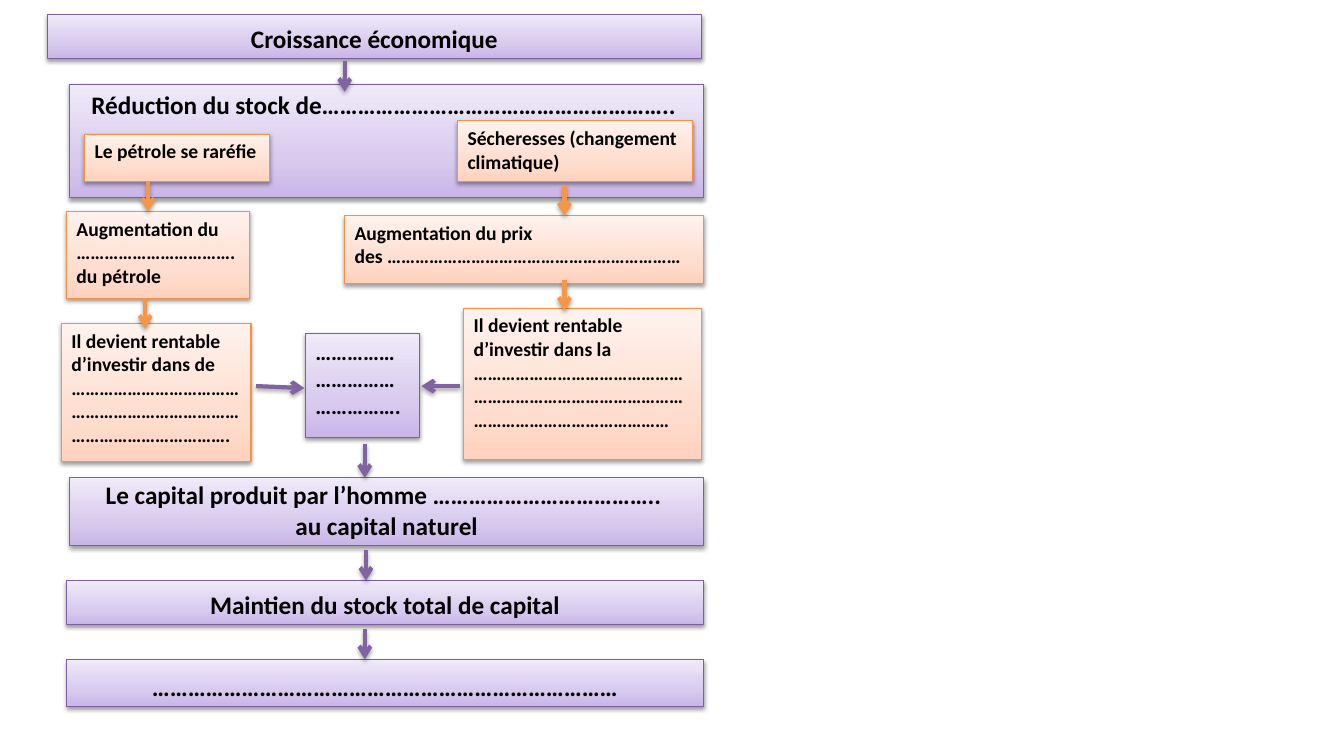
from copy import deepcopy
from dataclasses import dataclass

from lxml import etree
from pptx import Presentation
from pptx.dml.color import RGBColor
from pptx.enum.shapes import MSO_CONNECTOR, MSO_SHAPE
from pptx.enum.text import MSO_ANCHOR, PP_ALIGN
from pptx.oxml.ns import qn
from pptx.shapes.autoshape import Shape
from pptx.slide import Slide
from pptx.util import Pt

RECTANGLE = MSO_SHAPE.RECTANGLE
STRAIGHT = MSO_CONNECTOR.STRAIGHT
TOP, BOTTOM = MSO_ANCHOR.TOP, MSO_ANCHOR.BOTTOM
LEFT, CENTER = PP_ALIGN.LEFT, PP_ALIGN.CENTER

BLACK = RGBColor(0x00, 0x00, 0x00)
FONT = "Calibri"
STOP_POSITIONS = (0, 0.35, 1)
ARROW_LENGTH = 21.6


@dataclass(frozen=True)
class Palette:
    gradient: tuple[RGBColor, RGBColor, RGBColor]
    outline: RGBColor
    arrow: RGBColor


@dataclass(frozen=True)
class Box:
    left: float
    top: float
    width: float
    height: float
    palette: Palette
    text: str
    size: float = 14
    align: PP_ALIGN = LEFT
    anchor: MSO_ANCHOR = TOP


@dataclass(frozen=True)
class Arrow:
    palette: Palette
    x: float
    y: float
    dx: float = 0
    dy: float = ARROW_LENGTH


PURPLE = Palette(
    (RGBColor(0xC9, 0xB5, 0xE8), RGBColor(0xD8, 0xCB, 0xEE), RGBColor(0xF0, 0xEA, 0xF9)),
    RGBColor(0x7D, 0x60, 0xA0),
    RGBColor(0x80, 0x64, 0xA2),
)
ORANGE = Palette(
    (RGBColor(0xFF, 0xD2, 0xBD), RGBColor(0xFF, 0xDE, 0xD0), RGBColor(0xFF, 0xF2, 0xED)),
    RGBColor(0xF6, 0x92, 0x40),
    RGBColor(0xF7, 0x96, 0x46),
)


def banner(left: float, top: float, width: float, height: float, text: str,
           anchor: MSO_ANCHOR = BOTTOM) -> Box:
    return Box(left, top, width, height, PURPLE, text, 18, CENTER, anchor)


BOXES = (
    banner(49.7, 60.5, 452.9, 80.6,
           "Réduction du stock de………………………………………………….. ", TOP),
    Box(60.5, 95.8, 131.8, 33.8, ORANGE, "Le pétrole se raréfie"),
    Box(47.5, 151.2, 131, 61.9, ORANGE,
        "Augmentation du\n…………………………….\ndu pétrole"),
    Box(43.9, 231.1, 135.4, 98.6, ORANGE,
        "Il devient rentable d’investir dans de\n"
        "…………………………………………………………………………………………….",),
    Box(218.2, 238.3, 81.4, 74.2, PURPLE, "……………………………………….", 16),
    banner(47.5, 414.7, 455, 31.7, "Maintien du stock total de capital"),
    banner(47.5, 470.9, 455, 33.8,
           "……………………………………………………………………"),
    Box(326.9, 86.4, 167.8, 43.2, ORANGE, "Sécheresses (changement climatique)"),
    Box(246.2, 154.1, 256.3, 48.2, ORANGE,
        "Augmentation du prix\ndes ………………………………………………………"),
    Box(331.2, 220.3, 169.9, 108, ORANGE,
        "Il devient rentable d’investir dans la "
        "……………………………………………………………………………………………………………………"),
    banner(49.7, 341.3, 452.9, 48.2,
           "Le capital produit par l’homme ……………………………….. \nau capital naturel"),
    banner(33.8, 10.1, 467.3, 31.7, "Croissance économique"),
)

ARROWS = (
    Arrow(ORANGE, 105.8, 129.6),
    Arrow(ORANGE, 403.2, 132.5),
    Arrow(ORANGE, 103.7, 213.1),
    Arrow(ORANGE, 403.2, 200.2),
    Arrow(PURPLE, 260.6, 316.8, dy=24.5),
    Arrow(PURPLE, 261.4, 393.1),
    Arrow(PURPLE, 260.6, 449.3),
    Arrow(PURPLE, 182.9, 275.8, dx=34.5, dy=1.4),
    Arrow(PURPLE, 328.3, 275.8, dx=-27.3, dy=0),
    Arrow(PURPLE, 246.2, 43.9),
)


def add_shadow(properties: etree.ElementBase, distance: float, opacity: int) -> None:
    for effects in properties.findall(qn("a:effectLst")):
        properties.remove(effects)
    effects = etree.SubElement(properties, qn("a:effectLst"))
    shadow = etree.SubElement(
        effects, qn("a:outerShdw"), blurRad=str(Pt(3.15)), dist=str(Pt(distance)),
        dir="5400000", rotWithShape="0")
    color = etree.SubElement(shadow, qn("a:srgbClr"), val=str(BLACK))
    etree.SubElement(color, qn("a:alpha"), val=str(opacity * 1000))


def fill_gradient(shape: Shape, colors: tuple[RGBColor, ...]) -> None:
    shape.fill.gradient()
    shape.fill.gradient_angle = 90
    stop_list = shape.element.spPr.find(qn("a:gradFill")).find(qn("a:gsLst"))
    stop_list.insert(1, deepcopy(stop_list[0]))
    for stop, position, color in zip(shape.fill.gradient_stops, STOP_POSITIONS, colors):
        stop.position = position
        stop.color.rgb = color


def write_text(shape: Shape, text: str, *, size: float, align: PP_ALIGN,
               anchor: MSO_ANCHOR) -> None:
    frame = shape.text_frame
    frame.word_wrap = True
    frame.vertical_anchor = anchor
    frame.text = text
    for paragraph in frame.paragraphs:
        paragraph.alignment = align
        for run in paragraph.runs:
            run.font.name = FONT
            run.font.size = Pt(size)
            run.font.bold = True
            run.font.color.rgb = BLACK


def draw_box(slide: Slide, box: Box) -> None:
    shape = slide.shapes.add_shape(
        RECTANGLE, Pt(box.left), Pt(box.top), Pt(box.width), Pt(box.height))
    fill_gradient(shape, box.palette.gradient)
    shape.line.color.rgb = box.palette.outline
    shape.line.width = Pt(0.75)
    shape.shadow.inherit = False
    add_shadow(shape.element.spPr, 1.6, 38)
    write_text(shape, box.text, size=box.size, align=box.align, anchor=box.anchor)


def draw_arrow(slide: Slide, arrow: Arrow) -> None:
    connector = slide.shapes.add_connector(
        STRAIGHT, Pt(arrow.x), Pt(arrow.y), Pt(arrow.x + arrow.dx), Pt(arrow.y + arrow.dy))
    connector.line.color.rgb = arrow.palette.arrow
    connector.line.width = Pt(3)
    properties = connector.element.spPr
    etree.SubElement(properties.find(qn("a:ln")), qn("a:tailEnd"), type="arrow")
    add_shadow(properties, 1.8, 35)


def main() -> None:
    presentation = Presentation()
    presentation.slide_width = Pt(960)
    presentation.slide_height = Pt(540)
    slide = presentation.slides.add_slide(presentation.slide_layouts[6])
    for box in BOXES:
        draw_box(slide, box)
    for arrow in ARROWS:
        draw_arrow(slide, arrow)
    presentation.save("out.pptx")


if __name__ == "__main__":
    main()
